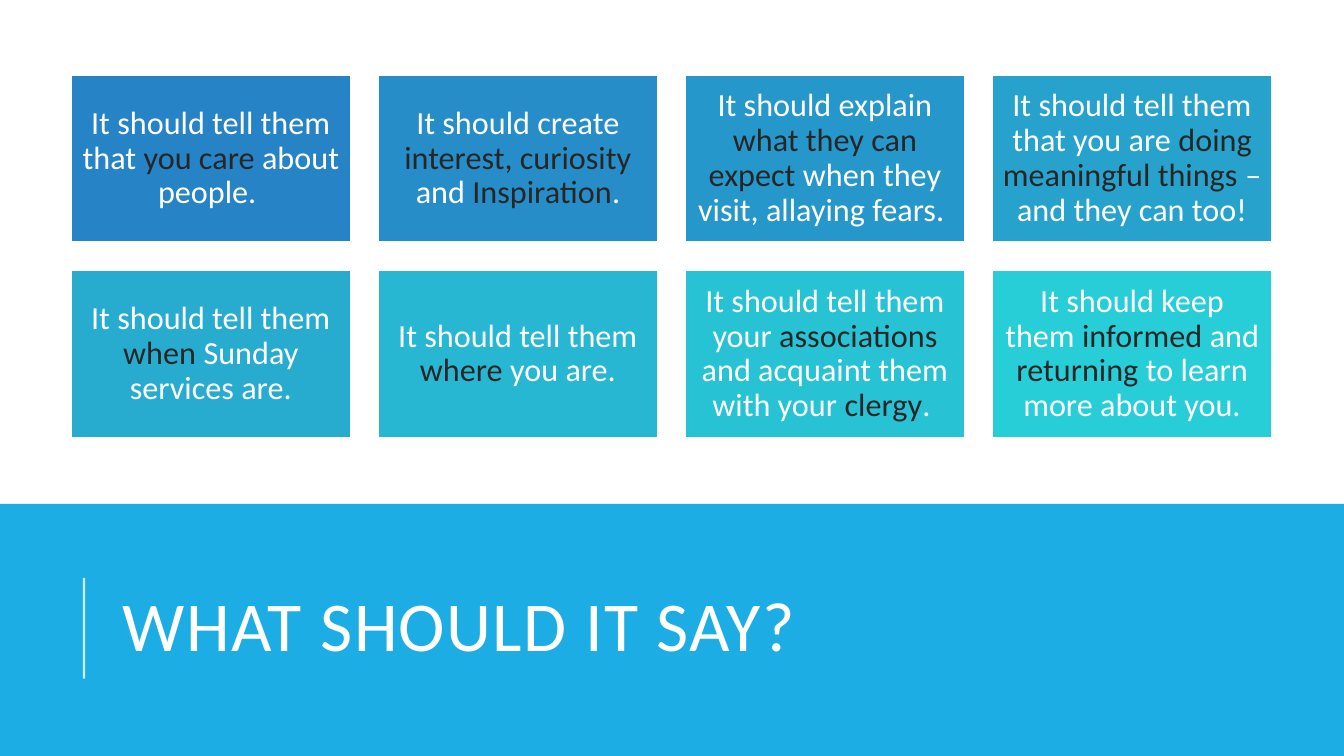
from lxml import etree
from pptx import Presentation
from pptx.dml.color import RGBColor
from pptx.enum.shapes import MSO_CONNECTOR, MSO_SHAPE
from pptx.enum.text import MSO_ANCHOR, MSO_AUTO_SIZE, PP_ALIGN
from pptx.oxml.ns import qn
from pptx.util import Pt

RECTANGLE = MSO_SHAPE.RECTANGLE
STRAIGHT = MSO_CONNECTOR.STRAIGHT
MIDDLE = MSO_ANCHOR.MIDDLE
NO_AUTOFIT = MSO_AUTO_SIZE.NONE
LEFT, CENTER = PP_ALIGN.LEFT, PP_ALIGN.CENTER

FONT = "Calibri"
WHITE, DARK, BAND_BLUE = "FFFFFF", "262626", "1CADE4"
SLIDE_WIDTH, SLIDE_HEIGHT, BAND_TOP = 960, 540, 360
COLUMNS = 4
CARD_LEFT, CARD_TOP = 51, 53.5
CARD_WIDTH, CARD_HEIGHT, CARD_GAP = 199.4, 119.6, 19.94

CARDS = [
    ("2683C6", ["It should tell them that ", "you care", " about people. "]),
    ("268DC8", ["It should create ", "interest, curiosity ", "and ", "Inspiration", "."]),
    ("2697CB", ["It should explain ", "what they can expect ",
                "when they visit, allaying fears. "]),
    ("26A2CD", ["It should tell them that you are ", "doing meaningful things ",
                "– and they can too!"]),
    ("27ACD0", ["It should tell them ", "when", " Sunday services are."]),
    ("27B7D2", ["It should tell them ", "where", " you are."]),
    ("27C3D5", ["It should tell them your ", "associations ",
                "and acquaint them with your ", "clergy", ". "]),
    ("27CED7", ["It should keep them ", "informed", " and ", "returning",
                " to learn more about you."]),
]


def color(hex_string):
    """Turn a hex string into a colour."""
    return RGBColor.from_string(hex_string)


def add_run(paragraph, text, size, hex_string):
    """Add one formatted run to a paragraph and return it."""
    run = paragraph.add_run()
    run.text = text
    run.font.name = FONT
    run.font.size = Pt(size)
    run.font.color.rgb = color(hex_string)
    return run


def format_frame(frame, inset):
    """Wrap and vertically centre a text frame with equal insets."""
    frame.word_wrap = True
    frame.auto_size = NO_AUTOFIT
    frame.vertical_anchor = MIDDLE
    frame.margin_left = frame.margin_right = Pt(inset)
    frame.margin_top = frame.margin_bottom = Pt(inset)


def add_rectangle(slide, left, top, width, height, fill):
    """Add a flat filled rectangle without an outline."""
    shape = slide.shapes.add_shape(RECTANGLE, Pt(left), Pt(top), Pt(width), Pt(height))
    shape.shadow.inherit = False
    shape.fill.solid()
    shape.fill.fore_color.rgb = color(fill)
    shape.line.fill.background()
    return shape


def add_card(slide, index, fill, pieces):
    """Add a grid card whose every second text piece is dark."""
    row, column = divmod(index, COLUMNS)
    left = CARD_LEFT + column * (CARD_WIDTH + CARD_GAP)
    top = CARD_TOP + row * (CARD_HEIGHT + CARD_GAP)
    card = add_rectangle(slide, left, top, CARD_WIDTH, CARD_HEIGHT, fill)
    card.line.color.rgb = color(WHITE)
    card.line.width = Pt(1.25)
    format_frame(card.text_frame, 7)
    paragraph = card.text_frame.paragraphs[0]
    paragraph.alignment = CENTER
    paragraph.line_spacing = 0.9
    for position, text in enumerate(pieces):
        add_run(paragraph, text, 23, DARK if position % 2 else WHITE)


def add_accent_line(slide):
    """Add the slightly transparent vertical line beside the title."""
    line = slide.shapes.add_connector(STRAIGHT, Pt(60), Pt(484.8), Pt(60), Pt(412.8))
    line.line.color.rgb = color(WHITE)
    line.line.width = Pt(1.5)
    properties = line._element.spPr
    rgb_element = properties.find(".//" + qn("a:srgbClr"))
    etree.SubElement(rgb_element, qn("a:alpha"), val="80000")
    etree.SubElement(properties, qn("a:effectLst"))


def place_title(slide, text):
    """Move the title placeholder onto the band and fill it."""
    title = slide.shapes.title
    title.left, title.top, title.width, title.height = Pt(80.6), Pt(391.7), Pt(765.4), Pt(118)
    slide.shapes._spTree.append(title._element)
    format_frame(title.text_frame, 7.2)
    paragraph = title.text_frame.paragraphs[0]
    paragraph.alignment = LEFT
    paragraph.line_spacing = 0.8
    run = add_run(paragraph, text, 50, WHITE)
    run.font._element.set("spc", "100")


def main():
    """Build and save the slide."""
    presentation = Presentation()
    presentation.slide_width = Pt(SLIDE_WIDTH)
    presentation.slide_height = Pt(SLIDE_HEIGHT)
    slide = presentation.slides.add_slide(presentation.slide_layouts[5])
    add_rectangle(slide, 0, BAND_TOP, SLIDE_WIDTH, SLIDE_HEIGHT - BAND_TOP, BAND_BLUE)
    add_accent_line(slide)
    place_title(slide, "WHAT SHOULD IT SAY?")
    for index, (fill, pieces) in enumerate(CARDS):
        add_card(slide, index, fill, pieces)
    presentation.save("out.pptx")


if __name__ == "__main__":
    main()
